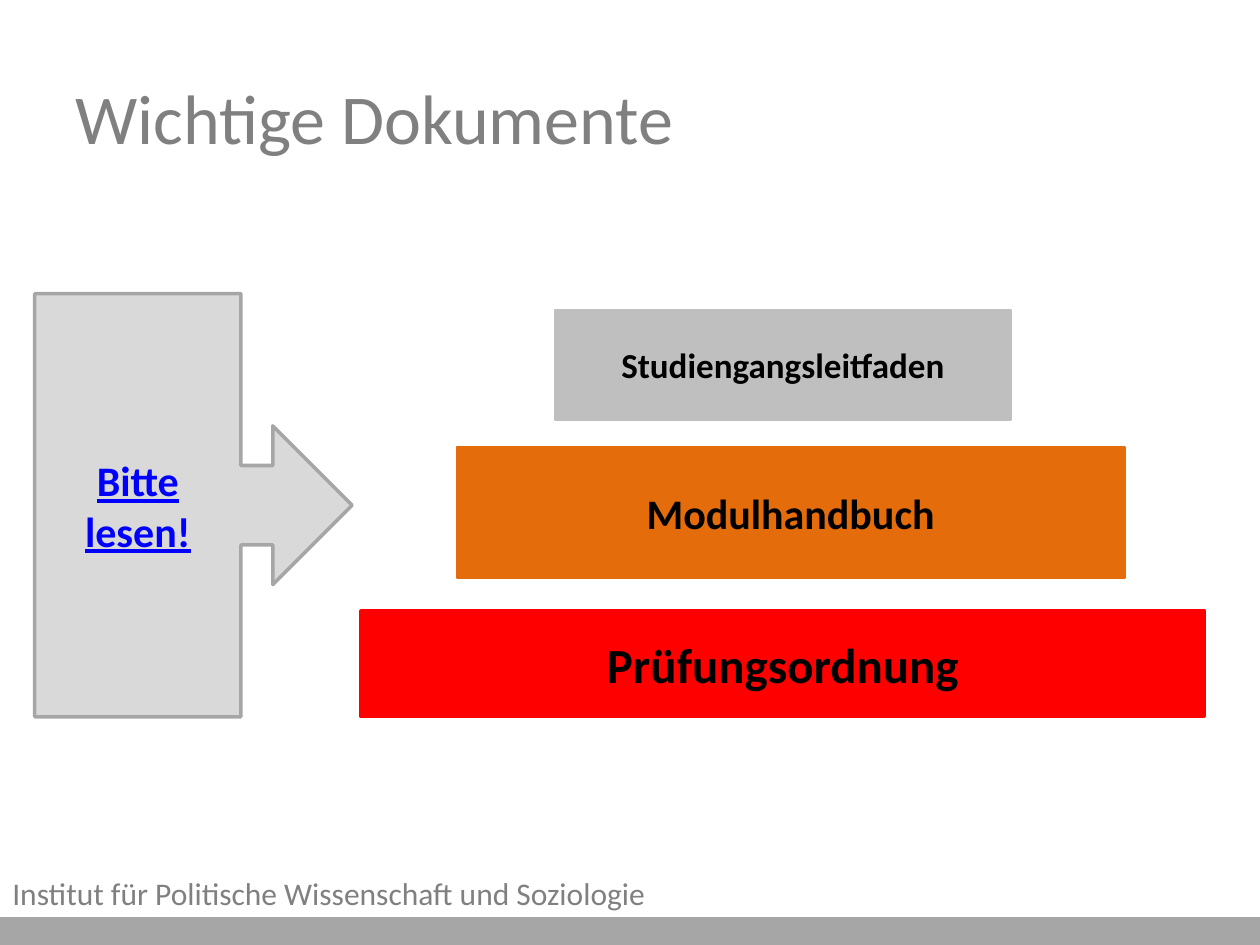
from pptx import Presentation
from pptx.dml.color import RGBColor
from pptx.enum.shapes import MSO_SHAPE
from pptx.enum.text import MSO_ANCHOR, PP_ALIGN
from pptx.util import Cm, Pt

RECT = MSO_SHAPE.RECTANGLE
CALLOUT = MSO_SHAPE.RIGHT_ARROW_CALLOUT
MIDDLE = MSO_ANCHOR.MIDDLE
LEFT, CENTER = PP_ALIGN.LEFT, PP_ALIGN.CENTER

COLORS = {
    "text": "808080", "bar": "A6A6A6", "black": "000000", "link": "0000FF",
    "arrow": "D9D9D9", "red": "FF0000", "orange": "E46C0A", "gray": "BFBFBF",
}


def color(name):
    return RGBColor.from_string(COLORS[name])


def write(shape, text, ink, align=LEFT, **style):
    """Fill the shape with one formatted, vertically centred paragraph."""
    frame = shape.text_frame
    frame.word_wrap = True
    frame.vertical_anchor = MIDDLE
    para = frame.paragraphs[0]
    para.alignment = align
    run = para.add_run()
    run.text = text
    run.font.color.rgb = color(ink)
    for key, value in {"name": "Calibri", **style}.items():
        setattr(run.font, key, value)


def block(shapes, kind, box, fill, line, width):
    shape = shapes.add_shape(kind, *map(Cm, box))
    shape.shadow.inherit = False
    shape.fill.solid()
    shape.fill.fore_color.rgb = color(fill)
    shape.line.color.rgb = color(line)
    shape.line.width = Pt(width)
    return shape


def footer(slide, x, y, w, h):
    """Institute name above a bar that closes the slide."""
    bar = 0.53
    block(slide.shapes, RECT, (x, y + h - bar, w, bar), "bar", "bar", 2)
    label = slide.shapes.add_textbox(Cm(x), Cm(y), Cm(18), Cm(h - bar))
    write(label, "Institut für Politische Wissenschaft und Soziologie",
          "text", size=Pt(18))


def title(slide, x, y, w, h):
    head = slide.shapes.title
    head.left, head.top, head.width, head.height = map(Cm, (x, y, w, h))
    write(head, "Wichtige Dokumente", "text", size=Pt(40))


def steps(slide, x, y):
    """Stacked documents, widest and weightiest at the bottom."""
    group = slide.shapes.add_group_shape()
    rows = [
        ("Prüfungsordnung", "red", 28, 2, (0, 6.07, 17, 2.13)),
        ("Modulhandbuch", "orange", 24, 1.25, (1.93, 2.77, 13.46, 2.64)),
        ("Studiengangsleitfaden", "gray", 20, 1.25, (3.91, 0, 9.19, 2.21)),
    ]
    for text, fill, size, width, (dx, dy, w, h) in rows:
        step = block(group.shapes, RECT, (x + dx, y + dy, w, h), fill, fill, width)
        write(step, text, "black", CENTER, size=Pt(size), bold=True)


def arrow(slide, *box):
    shape = block(slide.shapes, CALLOUT, box, "arrow", "bar", 2)
    write(shape, "Bitte lesen!", "link", CENTER,
          size=Pt(24), bold=True, underline=True)


def main():
    deck = Presentation()
    deck.slide_width, deck.slide_height = Cm(25.4), Cm(19.05)
    slide = deck.slides.add_slide(deck.slide_layouts[5])
    footer(slide, 0, 17.5, 25.4, 1.55)
    title(slide, 1.27, 0.76, 22.86, 3.18)
    steps(slide, 7.28, 6.25)
    arrow(slide, 0.7, 5.92, 6.4, 8.53)
    deck.save("out.pptx")


if __name__ == "__main__":
    main()
